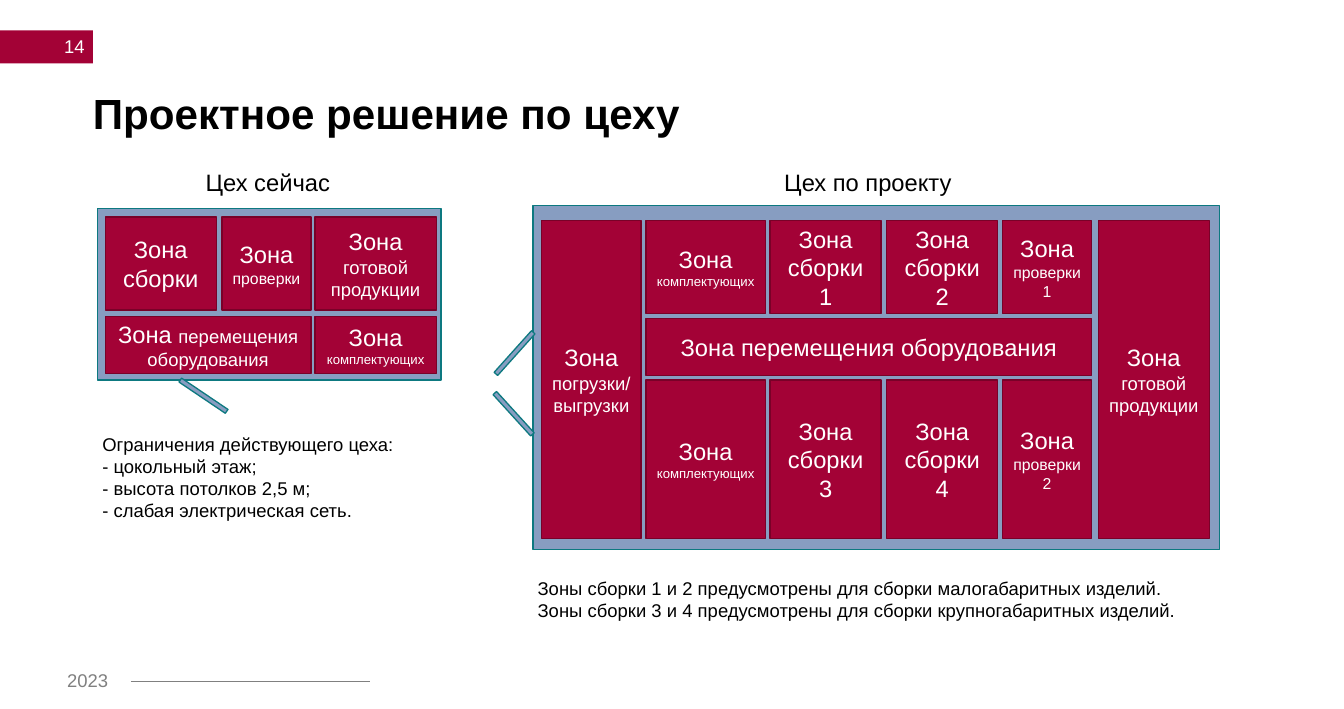
import pptx
import pptx.util
import pptx.dml.color
import pptx.enum.shapes
import pptx.enum.text
import pptx.oxml.ns
import lxml.etree

Inches = pptx.util.Inches
Pt = pptx.util.Pt
ALIGN = pptx.enum.text.PP_ALIGN
MIDDLE = pptx.enum.text.MSO_ANCHOR.MIDDLE

CRIMSON, DARK_CRIMSON = "A30236", "790128"
BLUE, TEAL = "879DC1", "0D7980"
BLACK, WHITE, GREY = "000000", "FFFFFF", "808080"


def color(hex_text):
    return pptx.dml.color.RGBColor.from_string(hex_text)


def add_span(para, text, size, tint, bold=False):
    span = para.add_run()
    span.text = text
    span.font.name = "Arial"
    span.font.size = Pt(size)
    span.font.bold = bold
    span.font.color.rgb = color(tint)


def add_text(page, left, top, width, height, lines, size, tint=BLACK,
             align=ALIGN.LEFT, wrap=True, bold=False):
    box = page.shapes.add_textbox(Inches(left), Inches(top), Inches(width), Inches(height))
    frame = box.text_frame
    frame.word_wrap = wrap
    for index, line in enumerate(lines):
        para = frame.paragraphs[0] if index == 0 else frame.add_paragraph()
        para.alignment = align
        add_span(para, line, size, tint, bold)
    return box


def add_block(page, left, top, width, height, fill, outline=None):
    block = page.shapes.add_shape(pptx.enum.shapes.MSO_SHAPE.RECTANGLE, Inches(left),
                                  Inches(top), Inches(width), Inches(height))
    block.shadow.inherit = False
    block.fill.solid()
    block.fill.fore_color.rgb = color(fill)
    if outline:
        block.line.color.rgb = color(outline)
        block.line.width = Pt(1)
    else:
        block.line.fill.background()
    return block


def add_zone(page, left, top, width, height, spans):
    zone = add_block(page, left, top, width, height, CRIMSON, DARK_CRIMSON)
    frame = zone.text_frame
    frame.word_wrap = True
    frame.vertical_anchor = MIDDLE
    para = frame.paragraphs[0]
    para.alignment = ALIGN.CENTER
    for text, size in spans:
        add_span(para, text, size, WHITE)


def add_hall(page, left, top, width, height, columns, rows, zones, doors):
    """Columns and rows are (offset, length); a zone spans first to last of each."""
    add_block(page, left, top, width, height, BLUE, TEAL)
    for first_col, last_col, first_row, last_row, spans in zones:
        x, y = columns[first_col][0], rows[first_row][0]
        add_zone(page, left + x, top + y, sum(columns[last_col]) - x,
                 sum(rows[last_row]) - y, spans)
    for x, y, angle in doors:
        door = add_block(page, left + x, top + y, 0.59, 0.05, BLUE, TEAL)
        door.rotation = angle


def zone_text(detail, size):
    return [("Зона ", 18), (detail, size)]


def add_header(page, left, top):
    # Page number tab
    add_block(page, left, top, 0.98, 0.35, CRIMSON)
    number = add_text(page, left + 0.18, top - 0.03, 0.81, 0.4, ["14"], 14, WHITE, ALIGN.RIGHT)
    number.text_frame.vertical_anchor = MIDDLE
    # Title
    title = add_text(page, left + 0.98, top + 0.66, 10.47, 0.78,
                     ["Проектное решение по цеху"], 32, bold=True)
    frame = title.text_frame
    frame.margin_left = frame.margin_right = frame.margin_top = frame.margin_bottom = 0
    frame.paragraphs[0].line_spacing = 0.9


def add_footer(page, left, top):
    add_text(page, left, top, 0.67, 0.34, ["2023"], 14, GREY)
    y = Inches(top + 0.18)
    rule = page.shapes.add_connector(pptx.enum.shapes.MSO_CONNECTOR.STRAIGHT,
                                     Inches(left + 0.77), y, Inches(left + 3.29), y)
    rule.line.color.rgb = color(GREY)
    rule.line.width = Pt(1.5)
    properties = rule.element.find(pptx.oxml.ns.qn("p:spPr"))
    lxml.etree.SubElement(properties, pptx.oxml.ns.qn("a:effectLst"))


def add_current_hall(page, left, top):
    add_text(page, left + 1.04, top - 0.48, 1.53, 0.4, ["Цех сейчас"], 18, wrap=False)
    columns = [(0.08, 1.17), (1.31, 0.94), (2.29, 1.28)]
    rows = [(0.09, 0.98), (1.14, 0.6)]
    zones = [
        (0, 0, 0, 0, [("Зона сборки", 18)]),
        (1, 1, 0, 0, zone_text("проверки", 12)),
        (2, 2, 0, 0, zone_text("готовой продукции", 14)),
        (0, 1, 1, 1, zone_text("перемещения оборудования", 14)),
        (2, 2, 1, 1, zone_text("комплектующих", 10)),
    ]
    add_hall(page, left, top, 3.62, 1.81, columns, rows, zones, [(0.82, 1.95, 34)])
    add_text(page, left - 0.05, top + 2.32, 3.29, 1.28,
             ["Ограничения действующего цеха:", "- цокольный этаж;",
              "- высота потолков 2,5 м;", "- слабая электрическая сеть."], 14, wrap=False)


def add_project_hall(page, left, top):
    add_text(page, left + 2.55, top - 0.45, 1.98, 0.4, ["Цех по проекту"], 18, wrap=False)
    columns = [(0.09, 1.05), (1.19, 1.26), (2.5, 1.17), (3.73, 1.17), (4.95, 0.94), (5.96, 1.17)]
    rows = [(0.16, 0.98), (1.19, 0.6), (1.84, 1.67)]
    zones = [
        (0, 0, 0, 2, zone_text("погрузки/ выгрузки", 14)),
        (1, 4, 1, 1, [("Зона перемещения оборудования", 18)]),
        (5, 5, 0, 2, zone_text("готовой продукции", 14)),
    ]
    # Upper and lower production lines
    for row, first_assembly, check in [(0, 1, 1), (2, 3, 2)]:
        zones += [
            (1, 1, row, row, zone_text("комплектующих", 10)),
            (2, 2, row, row, [(f"Зона сборки {first_assembly}", 18)]),
            (3, 3, row, row, [(f"Зона сборки {first_assembly + 1}", 18)]),
            (4, 4, row, row, zone_text(f"проверки {check}", 12)),
        ]
    doors = [(-0.5, 2.17, 47.7), (-0.49, 1.53, 131.9)]
    add_hall(page, left, top, 7.24, 3.63, columns, rows, zones, doors)
    add_text(page, left - 0.05, top + 3.87, 7.16, 0.57,
             ["Зоны сборки 1 и 2 предусмотрены для сборки малогабаритных изделий.",
              "Зоны сборки 3 и 4 предусмотрены для сборки крупногабаритных изделий."], 14)


def main():
    deck = pptx.Presentation()
    deck.slide_width, deck.slide_height = Inches(14.17), Inches(7.48)
    page = deck.slides.add_slide(deck.slide_layouts[6])
    add_header(page, 0, 0.32)
    add_current_hall(page, 1.03, 2.2)
    add_project_hall(page, 5.62, 2.17)
    add_footer(page, 0.61, 7.01)
    deck.save("out.pptx")


if __name__ == "__main__":
    main()
